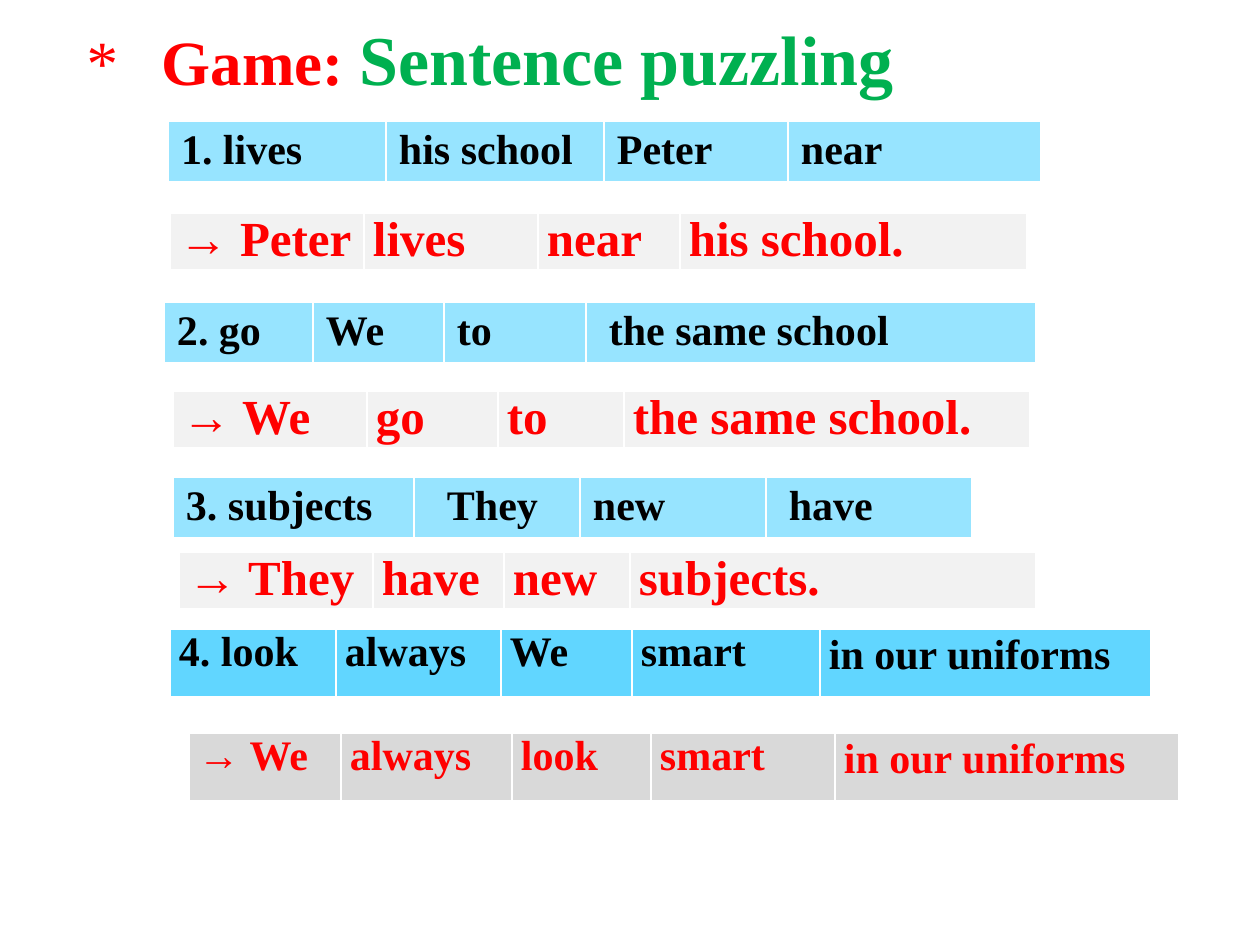
import pptx
import pptx.dml.color
import pptx.enum.text
import pptx.util
from pptx.oxml.ns import qn

EMU_PER_PX = 914400 / 126
FONT = "Times New Roman"
RED, GREEN, BLACK, WHITE = "FF0000", "00B050", "000000", "FFFFFF"
SKY, DEEP_SKY, PALE_GREY, GREY = "97E4FF", "61D6FF", "F2F2F2", "D9D9D9"
ROOMY, TIGHT = (13, 6), (9, 0)  # cell margins: side, top and bottom
SPACE = 10  # px, one space of indent

# left, top, row height, fill, text colour, size, margins, (word, column width, indent)
PUZZLES = [
    (168, 121, 61, SKY, BLACK, 24, ROOMY,
     [("1. lives", 218, 0), ("his school", 218, 0), ("Peter", 184, 0), ("near", 253, 0)]),
    (170, 213, 57, PALE_GREY, RED, 28, TIGHT,
     [("→ Peter", 194, 0), ("lives", 174, 0), ("near", 142, 0), ("his school.", 347, 0)]),
    (164, 302, 61, SKY, BLACK, 24, ROOMY,
     [("2. go", 149, 0), ("We", 131, 0), ("to", 142, 0), ("the same school", 450, SPACE)]),
    (173, 391, 57, PALE_GREY, RED, 28, TIGHT,
     [("→ We", 194, 0), ("go", 131, 0), ("to", 126, 0), ("the same school.", 406, 0)]),
    (173, 477, 61, SKY, BLACK, 24, ROOMY,
     [("3. subjects", 241, 0), ("They", 166, 2 * SPACE), ("new", 186, 0), ("have", 206, SPACE)]),
    (179, 552, 57, PALE_GREY, RED, 28, TIGHT,
     [("→ They", 194, 0), ("have", 131, 0), ("new", 126, 0), ("subjects.", 406, 0)]),
    (170, 629, 68, DEEP_SKY, BLACK, 24, TIGHT,
     [("4. look", 166, 0), ("always", 165, 0), ("We", 131, 0), ("smart", 188, 0),
      ("in our uniforms", 331, 0)]),
    (189, 733, 68, GREY, RED, 24, TIGHT,
     [("→ We", 152, 0), ("always", 171, 0), ("look", 139, 0), ("smart", 184, 0),
      ("in our uniforms", 344, 0)]),
]


def px(length):
    return pptx.util.Emu(round(length * EMU_PER_PX))


def color(value):
    return pptx.dml.color.RGBColor.from_string(value)


def style(span, size, ink, bold=True, italic=False):
    span.font.name = FONT
    span.font.size = pptx.util.Pt(size)
    span.font.bold = bold
    span.font.italic = italic
    span.font.color.rgb = color(ink)


def add_heading(page, left, top, width, height):
    box = page.shapes.title
    box.left, box.top, box.width, box.height = map(px, (left, top, width, height))
    box.line.color.rgb = color(WHITE)
    box.line.width = pptx.util.Pt(0.75)
    frame = box.text_frame
    frame.word_wrap = True
    frame.auto_size = pptx.enum.text.MSO_AUTO_SIZE.NONE
    frame.vertical_anchor = pptx.enum.text.MSO_ANCHOR.MIDDLE
    frame.margin_right = 0
    para = frame.paragraphs[0]
    para.alignment = pptx.enum.text.PP_ALIGN.LEFT
    stops = para._p.get_or_add_pPr().makeelement(qn("a:tabLst"), {})
    stops.append(stops.makeelement(qn("a:tab"), {"pos": str(px(78)), "algn": "l"}))
    para._p.get_or_add_pPr().append(stops)
    for text, size, ink, bold, italic in [
        ("*\t", 36, RED, False, True),
        ("Game: ", 36, RED, True, False),
        ("Sentence puzzling", 40, GREEN, True, False),
    ]:
        span = para.add_run()
        span.text = text
        style(span, size, ink, bold, italic)


def add_word_strip(page, left, top, height, fill, ink, size, margins, words):
    """Add a one-row table holding one word group in each cell."""
    width = sum(column_width for _, column_width, _ in words)
    table = page.shapes.add_table(
        1, len(words), px(left), px(top), px(width), px(height)).table
    table.horz_banding = False
    side, edge = margins
    for index, (word, column_width, indent) in enumerate(words):
        table.columns[index].width = px(column_width)
        cell = table.cell(0, index)
        cell.fill.solid()
        cell.fill.fore_color.rgb = color(fill)
        cell.margin_left, cell.margin_right = px(side + indent), px(side)
        cell.margin_top = cell.margin_bottom = px(edge)
        cell.text_frame.text = word
        para = cell.text_frame.paragraphs[0]
        style(para.runs[0], size, ink)
        if index == 4:
            para.line_spacing = 1.07
            para.space_after = pptx.util.Pt(8)


def main():
    deck = pptx.Presentation()
    deck.slide_width, deck.slide_height = px(1260), px(945)
    page = deck.slides.add_slide(deck.slide_layouts[5])
    add_heading(page, 71, 9, 844, 97)
    for puzzle in PUZZLES:
        add_word_strip(page, *puzzle)
    deck.save("out.pptx")


if __name__ == "__main__":
    main()
